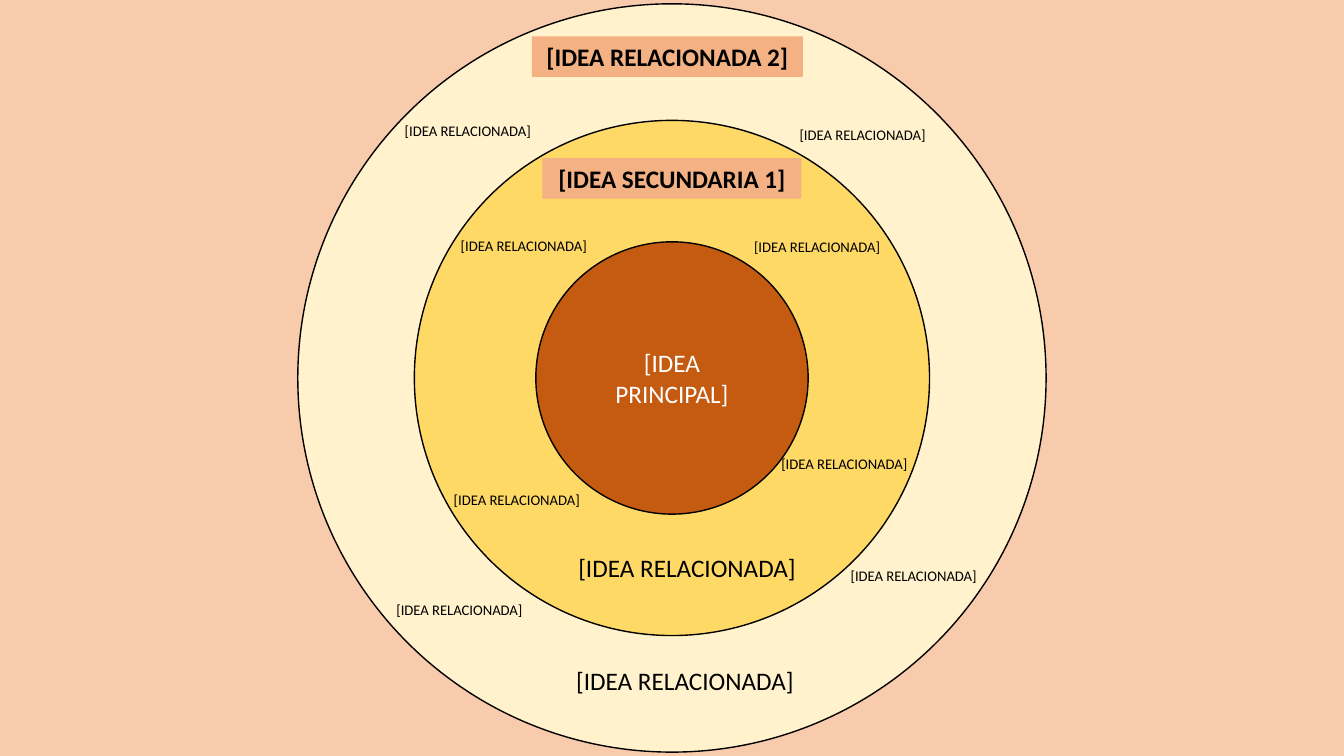
import pptx
import pptx.util
import pptx.dml.color
import pptx.enum.shapes
import pptx.enum.text

Pt = pptx.util.Pt
RGB = pptx.dml.color.RGBColor
SHAPE = pptx.enum.shapes.MSO_SHAPE
ALIGN = pptx.enum.text.PP_ALIGN
ANCHOR = pptx.enum.text.MSO_ANCHOR
FIT = pptx.enum.text.MSO_AUTO_SIZE

BLACK = RGB(0x00, 0x00, 0x00)
WHITE = RGB(0xFF, 0xFF, 0xFF)
PEACH = RGB(0xF8, 0xCB, 0xAD)
CREAM = RGB(0xFF, 0xF2, 0xCC)
GOLD = RGB(0xFF, 0xD9, 0x66)
RUST = RGB(0xC5, 0x5A, 0x11)
CORAL = RGB(0xF4, 0xB1, 0x83)

WIDE, HIGH = 960, 540
MID_X, MID_Y = WIDE / 2, HIGH / 2
RELATED = "[IDEA RELACIONADA]"


def write(shape, text, size=18, color=BLACK, bold=False, align=ALIGN.LEFT,
          anchor=ANCHOR.TOP, fit=FIT.SHAPE_TO_FIT_TEXT):
    frame = shape.text_frame
    frame.word_wrap = True
    frame.auto_size = fit
    frame.vertical_anchor = anchor
    para = frame.paragraphs[0]
    para.alignment = align
    run = para.add_run()
    run.text = text
    font = run.font
    font.name, font.size, font.bold = "Calibri", Pt(size), bold
    font.color.rgb = color


class Board:
    """Style and current slide of the circle diagram."""
    edge = 1
    small = 10.5

    def __init__(self, slide):
        self.slide = slide
        fill = slide.background.fill
        fill.solid()
        fill.fore_color.rgb = PEACH

    def shape(self, kind, x, y, w, h, fill):
        shape = self.slide.shapes.add_shape(kind, Pt(x), Pt(y), Pt(w), Pt(h))
        shape.shadow.inherit = False
        shape.fill.solid()
        shape.fill.fore_color.rgb = fill
        return shape

    def ring(self, size, fill):
        ring = self.shape(SHAPE.OVAL, MID_X - size / 2, MID_Y - size / 2,
                          size, size, fill)
        ring.line.color.rgb = BLACK
        ring.line.width = Pt(self.edge)
        return ring

    def tag(self, text, x, y, w):
        tag = self.shape(SHAPE.RECTANGLE, x, y, w, 29, CORAL)
        tag.line.fill.background()
        write(tag, text, bold=True, align=ALIGN.CENTER)

    def label(self, x, y, w, h, size):
        box = self.slide.shapes.add_textbox(Pt(x), Pt(y), Pt(w), Pt(h))
        write(box, RELATED, size=size)


def main():
    deck = pptx.Presentation()
    deck.slide_width, deck.slide_height = Pt(WIDE), Pt(HIGH)
    board = Board(deck.slides.add_slide(deck.slide_layouts[6]))

    # Rings, from the outside in
    board.ring(534.5, CREAM)
    board.ring(368, GOLD)
    core = board.ring(194.5, RUST)
    write(core, "[IDEA PRINCIPAL]", color=WHITE, align=ALIGN.CENTER,
          anchor=ANCHOR.MIDDLE, fit=FIT.NONE)

    # Ring headings
    board.tag("[IDEA SECUNDARIA 1]", 387.5, 113, 185)
    board.tag("[IDEA RELACIONADA 2]", 380, 26, 193.5)

    # Large labels at the foot of each ring
    for x, y in [(406, 391), (404.5, 471.5)]:
        board.label(x, y, 177, 29, 18)

    # Small labels: inner ring, then outer ring
    inner = [(551, 321.5), (322, 165.5), (317, 347), (531.5, 166.5)]
    outer = [(276, 425.5), (600.5, 401), (282, 83.5), (564, 86.5)]
    for x, y in inner + outer:
        board.label(x, y, 117.5, 21, board.small)

    deck.save("out.pptx")


if __name__ == "__main__":
    main()
